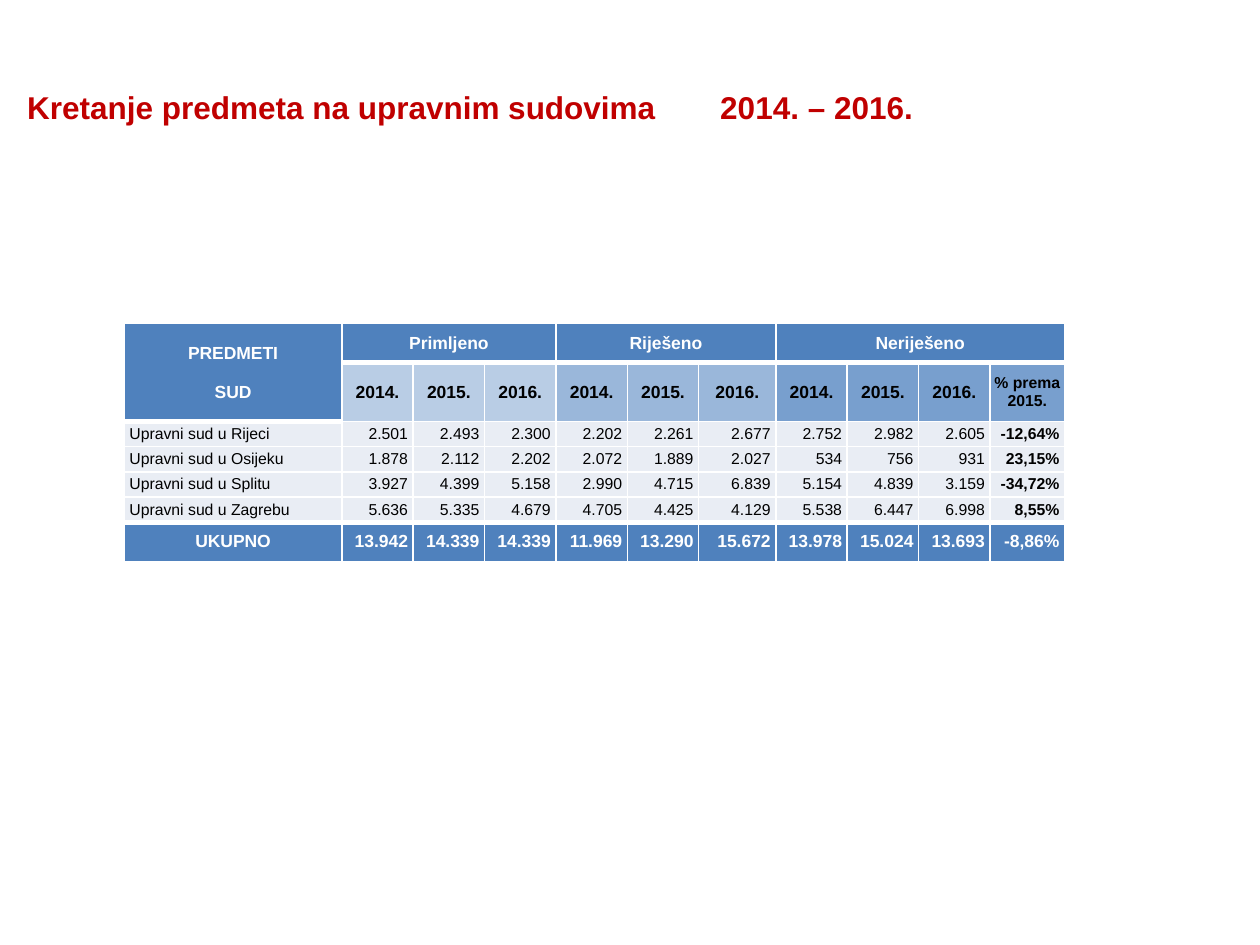
import pptx
import pptx.dml.color
import pptx.enum.text
import pptx.oxml
import pptx.oxml.ns
import pptx.util

Pt = pptx.util.Pt
Align = pptx.enum.text.PP_ALIGN
Anchor = pptx.enum.text.MSO_ANCHOR

COLORS = {
    "title": "C00000", "header": "4F81BD", "received": "B9CDE5",
    "resolved": "9AB7DA", "pending": "789FCE", "body": "E9EDF4",
    "white": "FFFFFF", "black": "000000",
}
YEARS = ["2014.", "2015.", "2016."]
GROUPS = [("Primljeno", 1, 3, "received"), ("Riješeno", 4, 6, "resolved"),
          ("Neriješeno", 7, 10, "pending")]
ROWS = [
    ["PREDMETI\nSUD"] + [""] * 10,
    [""] + YEARS * 3 + ["% prema 2015."],
    ["Upravni sud u Rijeci", "2.501", "2.493", "2.300", "2.202", "2.261",
     "2.677", "2.752", "2.982", "2.605", "-12,64%"],
    ["Upravni sud u Osijeku", "1.878", "2.112", "2.202", "2.072", "1.889",
     "2.027", "534", "756", "931", "23,15%"],
    ["Upravni sud u Splitu", "3.927", "4.399", "5.158", "2.990", "4.715",
     "6.839", "5.154", "4.839", "3.159", "-34,72%"],
    ["Upravni sud u Zagrebu", "5.636", "5.335", "4.679", "4.705", "4.425",
     "4.129", "5.538", "6.447", "6.998", "8,55%"],
    ["UKUPNO", "13.942", "14.339", "14.339", "11.969", "13.290",
     "15.672", "13.978", "15.024", "13.693", "-8,86%"],
]
WIDTHS = [124.3] + [40.8] * 5 + [44.1] + [40.8] * 3 + [42.6]
HEIGHTS = [22.3, 25.2] + [14.4] * 4 + [22.3]
TOTAL = len(ROWS) - 1
LAST = len(WIDTHS) - 1


def style_font(font, size, bold, color):
    font.name = "Arial"
    font.size = Pt(size)
    font.bold = bold
    font.color.rgb = pptx.dml.color.RGBColor.from_string(COLORS[color])


def add_borders(cell, top, bottom):
    """White cell edges; top and bottom are line widths in points."""
    properties = cell._tc.get_or_add_tcPr()
    for side, width in (("L", 1), ("R", 1), ("T", top), ("B", bottom)):
        properties.append(pptx.oxml.parse_xml(
            f'<a:ln{side} {pptx.oxml.ns.nsdecls("a")} w="{Pt(width)}">'
            f'<a:solidFill><a:srgbClr val="{COLORS["white"]}"/></a:solidFill>'
            f'</a:ln{side}>'))


deck = pptx.Presentation()
deck.slide_width = Pt(720)
deck.slide_height = Pt(540)
page = deck.slides.add_slide(deck.slide_layouts[6])

# Table
table = page.shapes.add_table(len(ROWS), len(WIDTHS), Pt(71), Pt(185),
                              Pt(sum(WIDTHS)), Pt(sum(HEIGHTS))).table
table.first_row = table.horz_banding = False
for column, width in zip(table.columns, WIDTHS):
    column.width = Pt(width)
for row, height in zip(table.rows, HEIGHTS):
    row.height = Pt(height)

for name, first, last, shade in GROUPS:
    ROWS[0][first] = name
    table.cell(0, first).merge(table.cell(0, last))
table.cell(0, 0).merge(table.cell(1, 0))
shades = {col: shade for name, first, last, shade in GROUPS
          for col in range(first, last + 1)}

for r, values in enumerate(ROWS):
    for c, value in enumerate(values):
        cell = table.cell(r, c)
        size, bold, color, fill, align = 10, True, "white", "header", Align.CENTER
        if r == 1 and c > 0:
            color, fill = "black", shades[c]
            size = 9 if c == LAST else 10
        elif 1 < r < TOTAL:
            size, bold, color, fill = 9, c == LAST, "black", "body"
            align = Align.RIGHT if c else Align.LEFT
        elif r == TOTAL and c > 0:
            align = Align.RIGHT

        add_borders(cell,
                    top=3 if r in (1, TOTAL) or (r, c) == (2, 0) else 1,
                    bottom=3 if r in (0, TOTAL - 1) or (r, c) == (1, 0) else 1)
        cell.fill.solid()
        cell.fill.fore_color.rgb = pptx.dml.color.RGBColor.from_string(COLORS[fill])
        cell.vertical_anchor = Anchor.MIDDLE
        cell.margin_top = cell.margin_bottom = 0
        cell.margin_left = Pt(3 if align == Align.LEFT else 0)
        cell.margin_right = Pt(3 if align == Align.RIGHT else 0)
        cell.text = value
        for index, para in enumerate(cell.text_frame.paragraphs):
            para.alignment = align
            if index:
                para.space_before = Pt(11.2)
            style_font(para.font, size, bold, color)

# Title
box = page.shapes.add_textbox(0, Pt(43.2), Pt(720), Pt(36))
frame = box.text_frame
frame.word_wrap = True
frame.vertical_anchor = Anchor.MIDDLE
frame.margin_left = Pt(15.6)
para = frame.paragraphs[0]
para.text = "Kretanje predmeta na upravnim sudovima\t\t2014. – 2016."
style_font(para.font, 18, True, "title")

deck.save("out.pptx")
